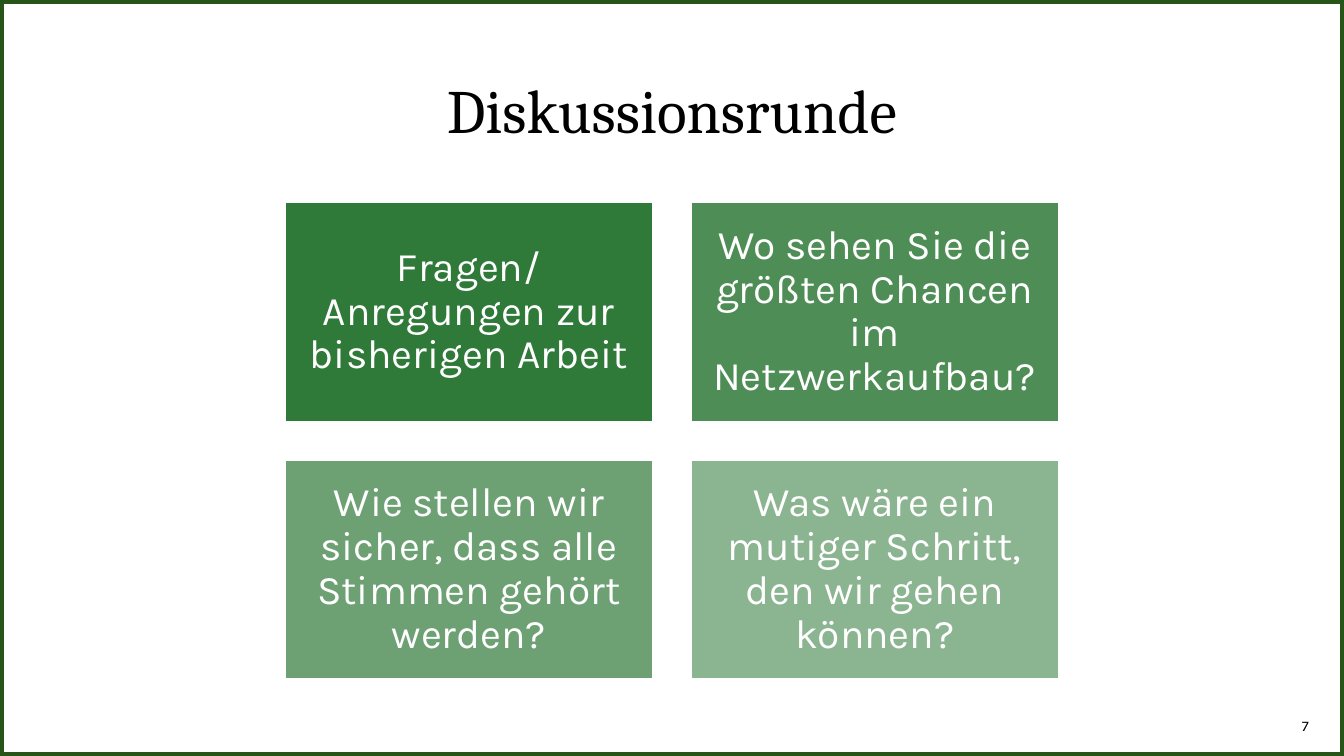
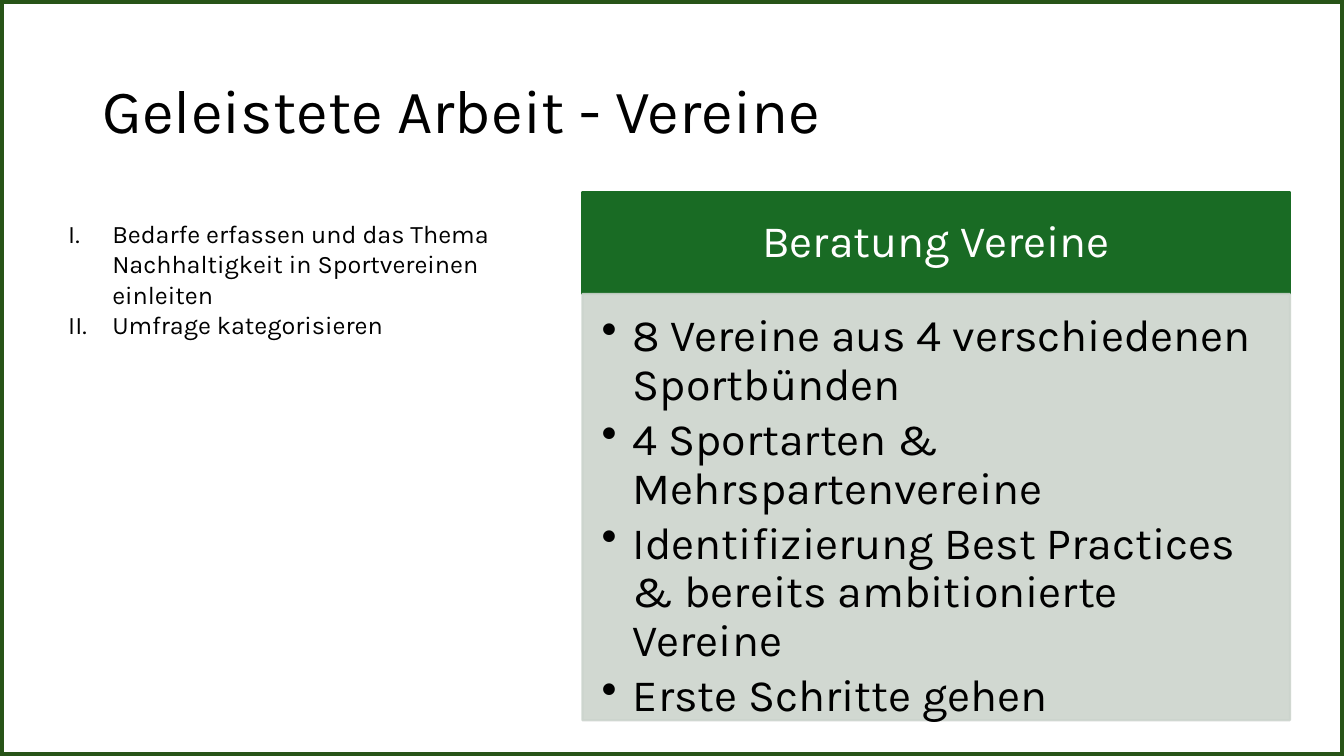
from dataclasses import dataclass
from lxml.etree import SubElement
from pptx import Presentation
from pptx.dml.color import RGBColor
from pptx.enum.shapes import MSO_SHAPE as Shape
from pptx.enum.text import MSO_ANCHOR as Anchor, MSO_AUTO_SIZE as AutoSize, PP_ALIGN as Align
from pptx.oxml.ns import qn
from pptx.util import Cm, Pt


@dataclass(frozen=True)
class Theme:
    green: RGBColor = RGBColor.from_string("196B24")
    frame: RGBColor = RGBColor.from_string("275417")
    panel: RGBColor = RGBColor.from_string("CCD4CD")
    black: RGBColor = RGBColor.from_string("000000")
    white: RGBColor = RGBColor.from_string("FFFFFF")
    serif: str = "Cambria"
    sans: str = "Karla"
    title_size: float = 44
    panel_size: float = 32
    card_size: float = 29
    list_size: float = 18
    number_size: float = 10.5


THEME = Theme()
WIDTH, HEIGHT = 33.87, 19.05
TITLE_BOX = (2.33, 1.02, 29.21, 3.68)

QUESTIONS = [
    "Fragen/Anregungen zur bisherigen Arbeit",
    "Wo sehen Sie die größten Chancen im Netzwerkaufbau?",
    "Wie stellen wir sicher, dass alle Stimmen gehört werden?",
    "Was wäre ein mutiger Schritt, den wir gehen können?",
]
STEPS = [
    "Bedarfe erfassen und das Thema Nachhaltigkeit in Sportvereinen einleiten",
    "Umfrage kategorisieren",
]
RESULTS = [
    "8 Vereine aus 4 verschiedenen Sportbünden",
    "4 Sportarten & Mehrspartenvereine",
    "Identifizierung Best Practices & bereits ambitionierte Vereine",
    "Erste Schritte gehen",
]


def add_marker(para, indent, tag, **attributes):
    properties = para._p.get_or_add_pPr()
    properties.set("marL", str(Cm(indent)))
    properties.set("indent", str(-Cm(indent)))
    SubElement(properties, qn(tag), **attributes)


def write(frame, lines, size, color=THEME.black, font=THEME.sans, align=Align.LEFT,
          anchor=Anchor.TOP, spacing=0.9, after=0, insets=None, marker=None):
    frame.word_wrap = True
    frame.auto_size = AutoSize.NONE
    frame.vertical_anchor = anchor
    if insets:
        (frame.margin_left, frame.margin_top,
         frame.margin_right, frame.margin_bottom) = map(Cm, insets)
    for index, line in enumerate(lines):
        para = frame.add_paragraph() if index else frame.paragraphs[0]
        para.text = line
        para.alignment = align
        para.line_spacing = spacing
        para.space_after = Pt(after)
        if marker:
            add_marker(para, **marker)
        para.font.name = font
        para.font.size = Pt(size)
        para.font.color.rgb = color


def set_alpha(format_, percent):
    color = format_._xPr.find(".//" + qn("a:srgbClr"))
    SubElement(color, qn("a:alpha"), val=str(percent * 1000))


def add_panel(page, box, fill, line, line_width, alpha=100):
    panel = page.shapes.add_shape(Shape.RECTANGLE, *map(Cm, box))
    panel.shadow.inherit = False
    if fill is None:
        panel.fill.background()
    else:
        panel.fill.solid()
        panel.fill.fore_color.rgb = fill
        if alpha < 100:
            set_alpha(panel.fill, alpha)
    panel.line.color.rgb = line
    panel.line.width = Pt(line_width)
    return panel


def add_text(page, box, lines, size, **style):
    write(page.shapes.add_textbox(*map(Cm, box)).text_frame, lines, size, **style)


def add_page(deck, title, font, align):
    page = deck.slides.add_slide(deck.slide_layouts[5])
    heading = page.shapes.title
    heading.left, heading.top, heading.width, heading.height = map(Cm, TITLE_BOX)
    write(heading.text_frame, [title], THEME.title_size, font=font, align=align,
          anchor=Anchor.MIDDLE)
    add_panel(page, (0, 0, WIDTH, HEIGHT), None, THEME.frame, 6)
    return page


def add_cards(page, box, texts, columns=2, gap=0.93):
    left, top, width, height = box
    rows = -(-len(texts) // columns)
    card_width = (width - gap * (columns - 1)) / columns
    card_height = (height - gap * (rows - 1)) / rows
    for index, text in enumerate(texts):
        row, column = divmod(index, columns)
        alpha = round(90 - 40 * index / (len(texts) - 1))
        place = (left + column * (card_width + gap), top + row * (card_height + gap),
                 card_width, card_height)
        card = add_panel(page, place, THEME.green, THEME.white, 2, alpha)
        write(card.text_frame, [text], THEME.card_size, color=THEME.white,
              align=Align.CENTER, anchor=Anchor.MIDDLE, insets=(0.3, 0.3, 0.3, 0.3))


def add_result_panel(page, box, heading, lines, header_height=2.58):
    left, top, width, height = box
    header = add_panel(page, (left, top, width, header_height),
                       THEME.green, THEME.green, 1.5)
    write(header.text_frame, [heading], THEME.panel_size, color=THEME.white,
          align=Align.CENTER, anchor=Anchor.MIDDLE, insets=(0.64, 0.36, 0.64, 0.36))
    body = add_panel(page, (left, top + header_height, width, height - header_height),
                     THEME.panel, THEME.panel, 1.5, 90)
    set_alpha(body.line._get_or_add_ln().solidFill.getparent() and body.line.fill, 90)
    write(body.text_frame, lines, THEME.panel_size, after=5,
          insets=(0.48, 0.48, 0.64, 0.72),
          marker={"indent": 0.79, "tag": "a:buChar", "char": "•"})


def build_discussion(deck):
    page = add_page(deck, "Diskussionsrunde", THEME.serif, Align.CENTER)
    add_cards(page, (7.17, 5.08, 19.53, 12.05), QUESTIONS)
    add_text(page, (32.56, 17.93, 1.09, 0.71), ["7"], THEME.number_size, spacing=1)


def build_clubs(deck):
    page = add_page(deck, "Geleistete Arbeit - Vereine", THEME.sans, Align.LEFT)
    add_result_panel(page, (14.68, 4.83, 17.83, 13.32), "Beratung Vereine", RESULTS)
    add_text(page, (1.47, 5.38, 12.32, 3.33), STEPS, THEME.list_size, spacing=1,
             marker={"indent": 1.11, "tag": "a:buAutoNum", "type": "romanUcPeriod"})


def main():
    deck = Presentation()
    deck.slide_width, deck.slide_height = Cm(WIDTH), Cm(HEIGHT)
    build_discussion(deck)
    build_clubs(deck)
    deck.save("out.pptx")


if __name__ == "__main__":
    main()
